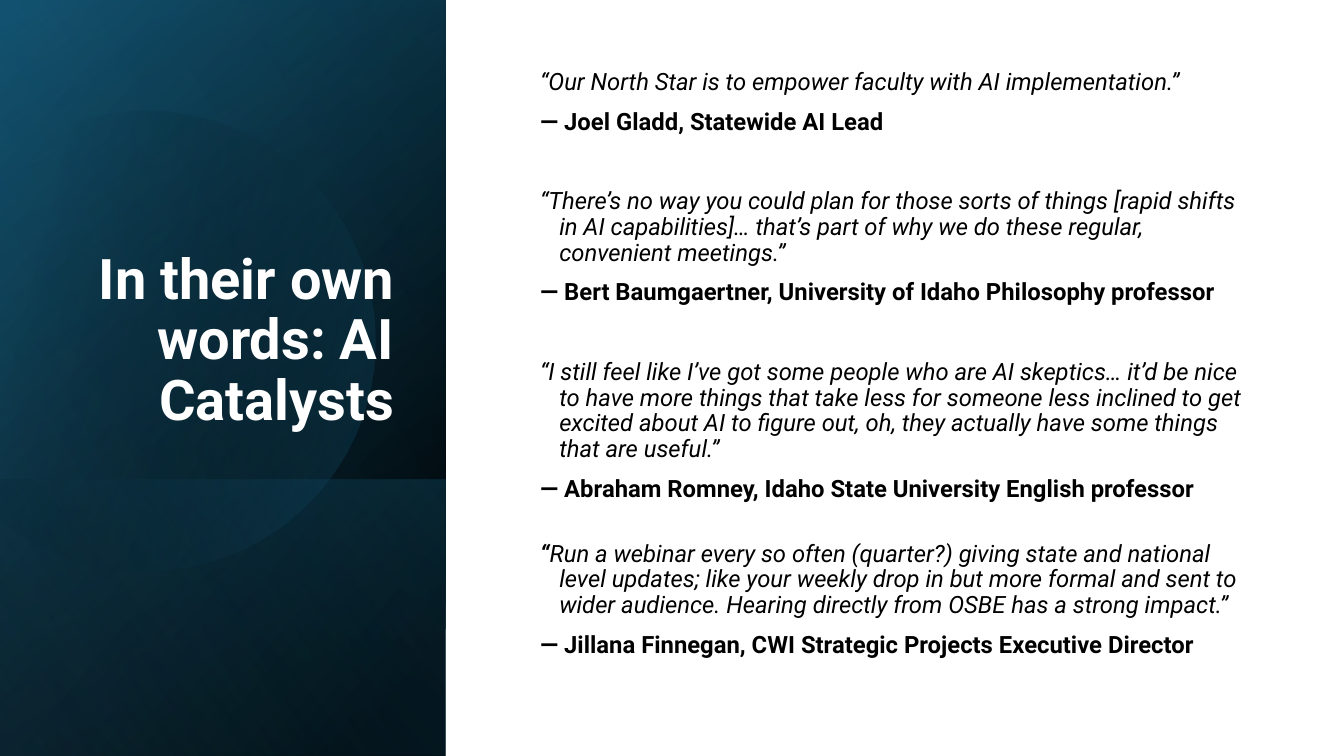
"""Build a slide of four quotations beside a dark gradient panel."""
import dataclasses
import math
import typing

import lxml.etree
import pptx
import pptx.dml.color
import pptx.enum.shapes
import pptx.enum.text
import pptx.oxml.ns
import pptx.util

RGBColor = pptx.dml.color.RGBColor
BLACK = RGBColor(0x00, 0x00, 0x00)
WHITE = RGBColor(0xFF, 0xFF, 0xFF)
DEEP_BLUE = RGBColor(0x10, 0x48, 0x62)
TEAL = RGBColor(0x15, 0x60, 0x82)
SKY = RGBColor(0x46, 0xB1, 0xE1)

CELL = pptx.util.Inches(0.1)
SLIDE_COLUMNS, SLIDE_ROWS = 133.33, 75
PANEL_COLUMNS = 44.2
BASE_TOP = 47.6
FONT = "Roboto"
HANGING = pptx.util.Inches(0.19)

Point = tuple[float, float]


class Stop(typing.NamedTuple):
    """A gradient stop: place and opacity in percent."""
    place: int
    color: RGBColor
    opacity: int = 100


@dataclasses.dataclass
class Gradient:
    """A linear gradient with a clockwise angle in degrees."""
    angle: int
    stops: tuple[Stop, Stop]


@dataclasses.dataclass
class Layer:
    """A full-width panel layer that starts at a grid row."""
    top: float
    gradient: Gradient


@dataclasses.dataclass
class Quote:
    """A quotation, its speaker and the space above it in points."""
    text: str
    speaker: str
    space_before: float
    bold_mark: bool = False


LAYERS = (
    Layer(0, Gradient(50, (Stop(8, BLACK), Stop(100, DEEP_BLUE)))),
    Layer(0, Gradient(30, (Stop(0, BLACK, 0), Stop(99, TEAL, 46)))),
    Layer(BASE_TOP, Gradient(130, (Stop(2, TEAL, 29), Stop(100, BLACK, 30)))),
)
GLOW = Layer(0, Gradient(120, (Stop(0, BLACK, 0), Stop(99, SKY, 11))))
DISC_GRADIENT = Gradient(30, (Stop(29, BLACK, 0), Stop(100, TEAL, 43)))
DISC_CENTER: Point = (15.85, 33.45)
DISC_TILT = -16.1
DISC_START: Point = (14.9, 11)
DISC_PIECES: tuple[tuple[Point, ...], ...] = (
    ((24.6, 11.2), (33.5, 17.7), (36.3, 27.5)),
    ((39.8, 39.7), (32.8, 52.3), (20.7, 55.8)),
    ((13.1, 58), (5.3, 56.1), (-0.3, 51.4)),
    ((-1.5, 50.3),),
    ((-1.5, 17.5),),
    ((0, 16.1),),
    ((2.3, 14.2), (5, 12.8), (8, 11.9)),
    ((10.3, 11.3), (12.6, 11), DISC_START),
)
QUOTES = (
    Quote("“Our North Star is to empower faculty with AI implementation.”",
          "Joel Gladd, Statewide AI Lead", 0),
    Quote("“There’s no way you could plan for those sorts of things [rapid shifts in AI "
          "capabilities]… that’s part of why we do these regular, convenient meetings.”",
          "Bert Baumgaertner, University of Idaho Philosophy professor", 38.3),
    Quote("“I still feel like I’ve got some people who are AI skeptics… it’d be nice to have "
          "more things that take less for someone less inclined to get excited about AI to "
          "figure out, oh, they actually have some things that are useful.”",
          "Abraham Romney, Idaho State University English professor", 38.3),
    Quote("“Run a webinar every so often (quarter?) giving state and national level updates; "
          "like your weekly drop in but more formal and sent to wider audience. Hearing "
          "directly from OSBE has a strong impact.”",
          "Jillana Finnegan, CWI Strategic Projects Executive Director", 28.1, True),
)


def cells(count: float) -> int:
    """Return the length of a number of grid cells."""
    return round(count * CELL)


def apply_format(target: typing.Any, values: dict[str, typing.Any]) -> None:
    """Set each named attribute on the target."""
    for name, value in values.items():
        setattr(target, name, value)


def paint(shape: typing.Any, gradient: Gradient) -> None:
    """Give a shape a gradient fill, no line and no shadow."""
    qn = pptx.oxml.ns.qn
    shape.shadow.inherit = False
    shape.line.fill.background()
    shape.fill.background()
    no_fill = shape._element.spPr.find(qn("a:noFill"))
    fill = lxml.etree.Element(qn("a:gradFill"), rotWithShape="1")
    stop_list = lxml.etree.SubElement(fill, qn("a:gsLst"))
    for stop in gradient.stops:
        entry = lxml.etree.SubElement(stop_list, qn("a:gs"), pos=str(stop.place * 1000))
        color = lxml.etree.SubElement(entry, qn("a:srgbClr"), val=str(stop.color))
        lxml.etree.SubElement(color, qn("a:alpha"), val=str(stop.opacity * 1000))
    lxml.etree.SubElement(fill, qn("a:lin"), ang=str(gradient.angle * 60000), scaled="0")
    no_fill.getparent().replace(no_fill, fill)


def add_rectangle(slide: typing.Any, left: float, top: float,
                  width: float, height: float) -> typing.Any:
    """Add a rectangle measured in grid cells."""
    return slide.shapes.add_shape(pptx.enum.shapes.MSO_SHAPE.RECTANGLE,
                                  *map(cells, (left, top, width, height)))


def draw_backdrop(slide: typing.Any) -> None:
    """Cover the slide with plain white."""
    backdrop = add_rectangle(slide, 0, 0, SLIDE_COLUMNS, SLIDE_ROWS)
    backdrop.shadow.inherit = False
    backdrop.line.fill.background()
    backdrop.fill.solid()
    backdrop.fill.fore_color.rgb = WHITE


def draw_layer(slide: typing.Any, layer: Layer) -> None:
    """Draw one mirrored layer, turned upright, down to the slide's foot."""
    length = SLIDE_ROWS - layer.top
    inset = (PANEL_COLUMNS - length) / 2
    shape = add_rectangle(slide, inset, layer.top - inset, length, PANEL_COLUMNS)
    shape.rotation = 90
    shape._element.spPr.xfrm.set("flipH", "1")
    paint(shape, layer.gradient)


def untilt(point: Point) -> tuple[int, int]:
    """Turn a point about the disc's centre into the untilted frame."""
    angle = math.radians(-DISC_TILT)
    across, down = (value - center for value, center in zip(point, DISC_CENTER))
    return (cells(DISC_CENTER[0] + across * math.cos(angle) - down * math.sin(angle)),
            cells(DISC_CENTER[1] + across * math.sin(angle) + down * math.cos(angle)))


def draw_disc(slide: typing.Any) -> None:
    """Draw the tilted disc cut at the slide's left edge."""
    qn = pptx.oxml.ns.qn
    builder = slide.shapes.build_freeform(*untilt(DISC_START))
    builder.add_line_segments([untilt(point) for piece in DISC_PIECES for point in piece])
    disc = builder.convert_to_shape()
    lines = iter(list(disc._element.iter(qn("a:lnTo"))))
    for piece in DISC_PIECES:
        members = [next(lines) for _ in piece]
        if len(members) == 3:
            curve = lxml.etree.Element(qn("a:cubicBezTo"))
            curve.extend([member[0] for member in members])
            members[0].addprevious(curve)
            for member in members:
                member.getparent().remove(member)
    disc.rotation = DISC_TILT
    paint(disc, DISC_GRADIENT)


def write_title(slide: typing.Any) -> None:
    """Place and format the title in front of the panel."""
    title = slide.shapes.title
    title._element.getparent().append(title._element)
    apply_format(title, {"left": cells(5.1), "top": cells(6.4),
                         "width": cells(35), "height": cells(37)})
    apply_format(title.text_frame, {
        "text": "In their own words: AI Catalysts", "word_wrap": True,
        "auto_size": pptx.enum.text.MSO_AUTO_SIZE.NONE,
        "vertical_anchor": pptx.enum.text.MSO_ANCHOR.BOTTOM})
    paragraph = title.text_frame.paragraphs[0]
    apply_format(paragraph, {"alignment": pptx.enum.text.PP_ALIGN.RIGHT, "line_spacing": 0.9})
    apply_format(paragraph.runs[0].font, {"name": FONT, "size": pptx.util.Pt(40), "bold": True})
    paragraph.runs[0].font.color.rgb = WHITE


def write_paragraph(paragraph: typing.Any, space_before: float,
                    runs: list[tuple[str, bool, bool]]) -> None:
    """Fill a hanging paragraph with runs of text, bold and italic."""
    properties = paragraph._p.get_or_add_pPr()
    properties.set("marL", str(HANGING))
    properties.set("indent", str(-HANGING))
    apply_format(paragraph, {"line_spacing": 0.9, "space_before": pptx.util.Pt(space_before)})
    for text, bold, italic in runs:
        run = paragraph.add_run()
        run.text = text
        apply_format(run.font, {"name": FONT, "size": pptx.util.Pt(17),
                                "bold": bold, "italic": italic})
        run.font.color.rgb = BLACK


def write_quotes(slide: typing.Any) -> None:
    """Write every quotation followed by its speaker."""
    frame = slide.shapes.add_textbox(*map(cells, (52.6, 7.1, 71.7, 60.7))).text_frame
    apply_format(frame, {"word_wrap": True, "margin_top": 0, "margin_bottom": cells(2.6),
                         "vertical_anchor": pptx.enum.text.MSO_ANCHOR.MIDDLE})
    for index, quote in enumerate(QUOTES):
        paragraph = frame.add_paragraph() if index else frame.paragraphs[0]
        runs = [(quote.text, False, True)]
        if quote.bold_mark:
            runs = [(quote.text[:1], True, True), (quote.text[1:], False, True)]
        write_paragraph(paragraph, quote.space_before, runs)
        write_paragraph(frame.add_paragraph(), 10, [(f"— {quote.speaker}", True, False)])


def main() -> None:
    """Build and save the presentation."""
    presentation = pptx.Presentation()
    apply_format(presentation, {"slide_width": cells(SLIDE_COLUMNS),
                                "slide_height": cells(SLIDE_ROWS)})
    slide = presentation.slides.add_slide(presentation.slide_layouts.get_by_name("Title Only"))
    draw_backdrop(slide)
    for layer in LAYERS:
        draw_layer(slide, layer)
    draw_disc(slide)
    draw_layer(slide, GLOW)
    write_title(slide)
    write_quotes(slide)
    presentation.save("out.pptx")


if __name__ == "__main__":
    main()
